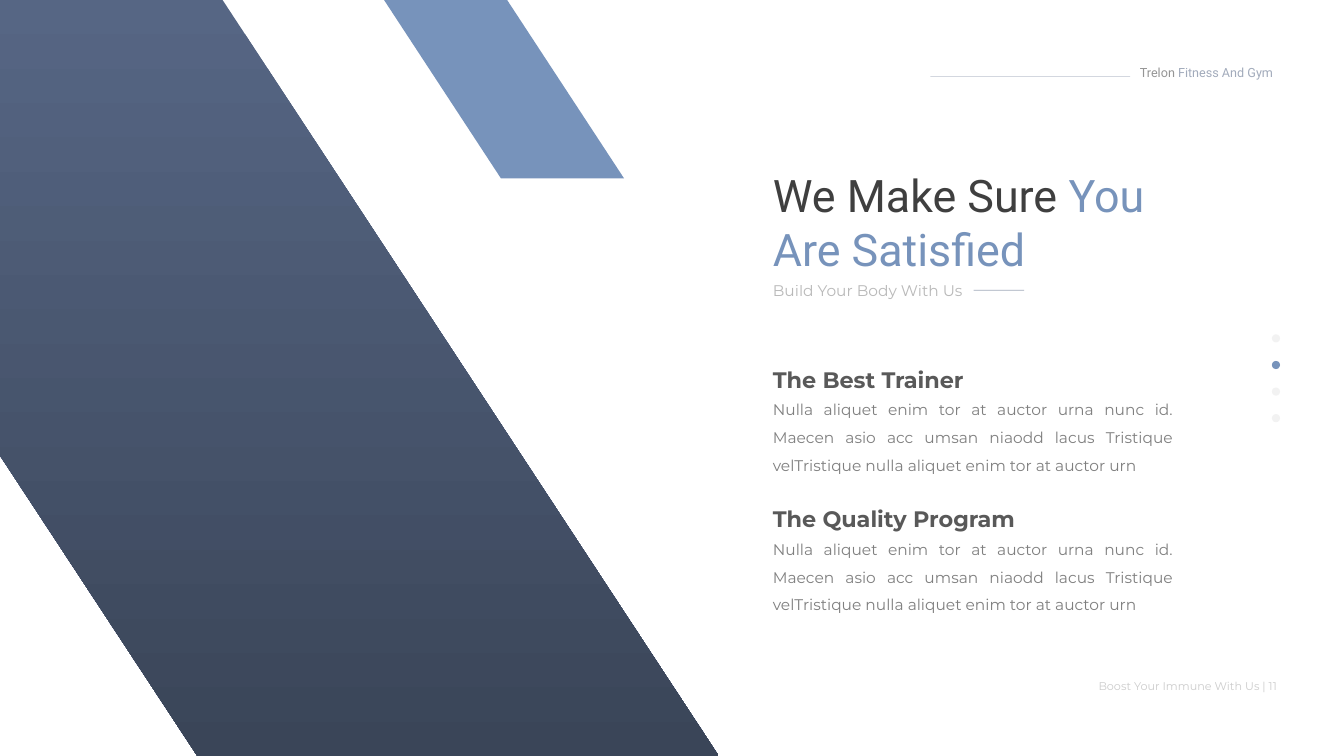
from lxml import etree
from pptx import Presentation
from pptx.dml.color import RGBColor
from pptx.enum.shapes import MSO_CONNECTOR, MSO_SHAPE
from pptx.enum.text import MSO_AUTO_SIZE, PP_ALIGN
from pptx.oxml.ns import qn
from pptx.util import Pt

NAVY, SLATE, BLUE = "566684", "3A4558", "7793BB"
DARK, HEADING, GREY = "3F3F3F", "595959", "7F7F7F"
PALE, FOOT = "F2F2F2", "CCCCCC"

band = [(0, 0), (159, 0), (513.4, 540), (141, 540), (0, 325.4)]
accent = [(445.7, 127.4), (357.8, 127.4), (274.3, 0), (362.2, 0)]

brand = [("Trelon ", DARK), ("Fitness And Gym", NAVY)]
title = [("We Make Sure ", DARK), ("You Are Satisfied", BLUE)]
tagline = [("Build Your Body With Us", GREY)]
footer = [("Boost Your Immune With Us | 11", FOOT)]
blurb = ("Nulla aliquet enim tor at auctor urna nunc id. Maecen asio acc umsan "
         "niaodd lacus Tristique velTristique nulla aliquet enim tor at auctor urn")
topics = [("The Best Trainer", blurb), ("The Quality Program", blurb)]
rules = [(664.6, 54.7, 142.6, 25), (695.5, 207.4, 36, 55)]
page_count, current_page = 4, 1

COLUMN = 545
TOPIC_TOP, TOPIC_STEP, BLURB_DROP = 248.2, 99.7, 27.7
DOT_LEFT, DOT_TOP, DOT_SIZE, DOT_STEP = 908.5, 238.8, 5.8, 19

deck = Presentation()
deck.slide_width, deck.slide_height = Pt(960), Pt(540)
slide = deck.slides.add_slide(deck.slide_layouts[6])
shapes = slide.shapes


def paint(colour, hex_code, opacity=100):
    colour.rgb = RGBColor.from_string(hex_code)
    if opacity < 100:
        node = colour._xFill.find(qn("a:srgbClr"))
        etree.SubElement(node, qn("a:alpha"), val=str(opacity * 1000))


def fill_plain(shape, hex_code):
    shape.fill.solid()
    paint(shape.fill.fore_color, hex_code)
    shape.line.fill.background()
    shape.shadow.inherit = False


def outline(corners):
    points = [(Pt(x), Pt(y)) for x, y in corners]
    builder = shapes.build_freeform(*points[0], scale=1.0)
    builder.add_line_segments(points[1:], close=True)
    return builder.convert_to_shape()


def write(runs, left, top, width, height, size, font="Montserrat", bold=False,
          opacity=100, align=PP_ALIGN.LEFT, spacing=None, wrap=True):
    frame = shapes.add_textbox(Pt(left), Pt(top), Pt(width), Pt(height)).text_frame
    frame.word_wrap = wrap
    frame.auto_size = MSO_AUTO_SIZE.SHAPE_TO_FIT_TEXT
    paragraph = frame.paragraphs[0]
    paragraph.alignment = align
    paragraph.line_spacing = spacing
    for text, hex_code in runs:
        run = paragraph.add_run()
        run.text = text
        run.font.size, run.font.name, run.font.bold = Pt(size), font, bold
        run.font.fill.solid()
        paint(run.font.fill.fore_color, hex_code, opacity)


stripe = outline(band)
fill_plain(stripe, NAVY)
stripe.fill.gradient()
stripe.fill.gradient_angle = 270
for stop, hex_code in zip(stripe.fill.gradient_stops, (NAVY, SLATE)):
    stop.color.rgb = RGBColor.from_string(hex_code)
    stop.position = 0 if hex_code == NAVY else 1
fill_plain(outline(accent), BLUE)

for page in range(page_count):
    dot = shapes.add_shape(MSO_SHAPE.OVAL, Pt(DOT_LEFT), Pt(DOT_TOP + page * DOT_STEP),
                           Pt(DOT_SIZE), Pt(DOT_SIZE))
    fill_plain(dot, BLUE if page == current_page else PALE)

for left, top, length, opacity in rules:
    rule = shapes.add_connector(MSO_CONNECTOR.STRAIGHT, Pt(left), Pt(top),
                                Pt(left + length), Pt(top))
    rule.line.width = Pt(0.5)
    rule.line.fill.solid()
    paint(rule.line.fill.fore_color, NAVY, opacity)
    etree.SubElement(rule._element.spPr, qn("a:effectLst"))

write(brand, 807.1, 42.5, 113.8, 18, 9, font="Roboto", opacity=55, wrap=False)
write(title, COLUMN, 116.6, 288, 85, 32, font="Roboto")
write(tagline, COLUMN, 197.3, 152, 20.9, 11, opacity=55, wrap=False)
write(footer, 777.6, 481.7, 141.8, 17.3, 8, align=PP_ALIGN.RIGHT, wrap=False)

for index, (heading, body) in enumerate(topics):
    top = TOPIC_TOP + index * TOPIC_STEP
    write([(body, GREY)], COLUMN, top + BLURB_DROP, 300.2, 64.8, 11,
          align=PP_ALIGN.JUSTIFY, spacing=1.5)
    write([(heading, HEADING)], COLUMN, top, 198.7, 33.1, 16, bold=True, spacing=1.5)

deck.save("out.pptx")
